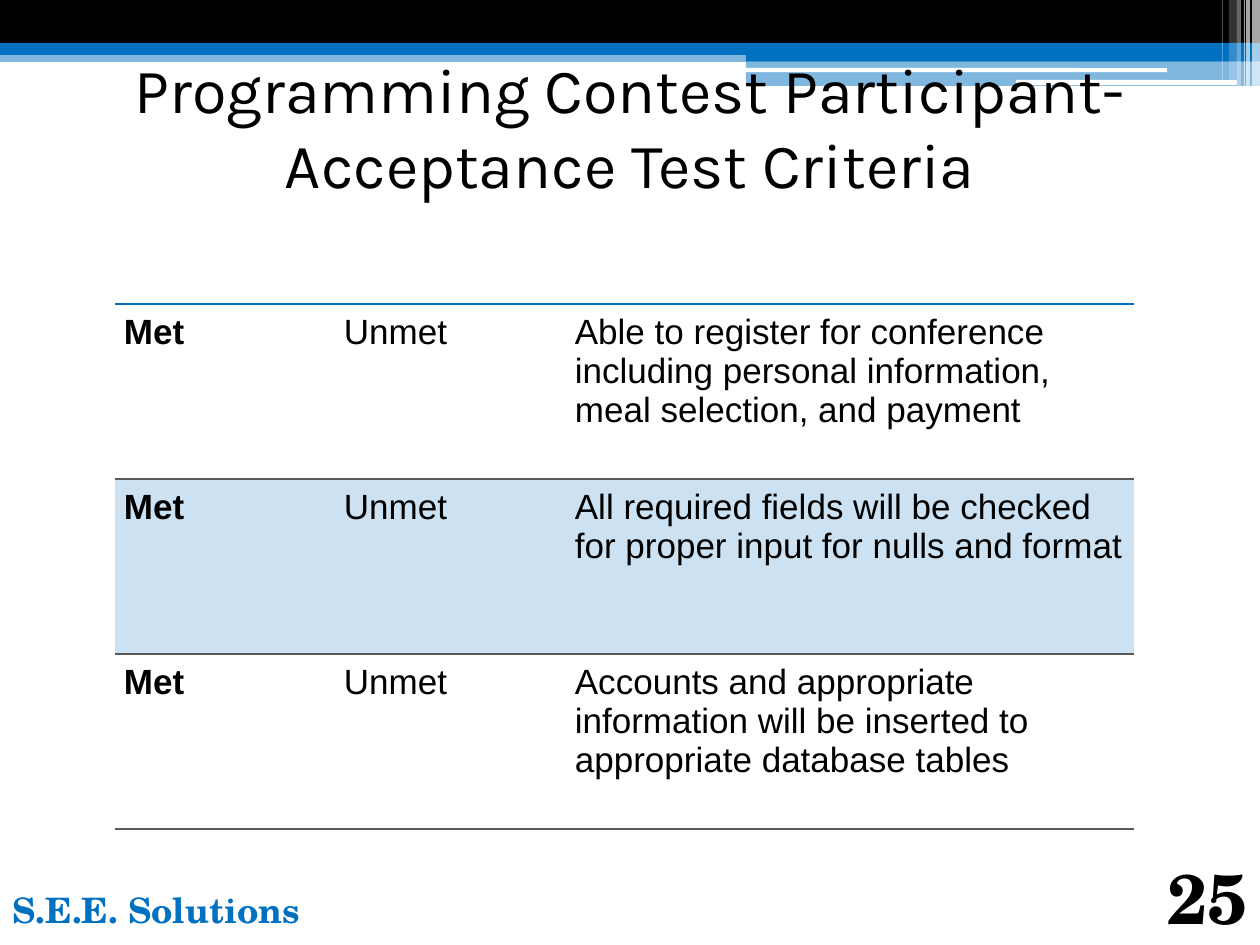
import dataclasses

import lxml.etree
import pptx
import pptx.dml.color
import pptx.enum.shapes
import pptx.enum.text
import pptx.oxml.ns
import pptx.util

SHAPE = pptx.enum.shapes.MSO_SHAPE
ALIGN = pptx.enum.text.PP_ALIGN
ANCHOR = pptx.enum.text.MSO_ANCHOR
qn = pptx.oxml.ns.qn


@dataclasses.dataclass(frozen=True)
class Theme:
    accent: str = "0070C0"
    dark: str = "000000"
    light: str = "FFFFFF"
    rule: str = "595959"
    title_font: str = "Karla"
    body_font: str = "Arial"
    footer_font: str = "TeX Gyre Schola"
    title_size: int = 36
    body_size: int = 20
    number_size: int = 40


THEME = Theme()
NO_GRID_STYLE = "{2D5ABB26-0587-4C30-8999-92F81FD0307C}"
CRITERIA = [
    "Able to register for conference including personal information, meal selection, and payment",
    "All required fields will be checked for proper input for nulls and format",
    "Accounts and appropriate information will be inserted to appropriate database tables",
]


def px(n):
    return round(n * 914400 / 126)


def rgb(color):
    return pptx.dml.color.RGBColor.from_string(color)


def set_fill(fill, color, alpha=100):
    fill.solid()
    fill.fore_color.rgb = rgb(color)
    if alpha < 100:
        clr = fill._xPr.find(qn("a:solidFill"))[0]
        lxml.etree.SubElement(clr, qn("a:alpha"), val=str(alpha * 1000))


def add_bar(s, box, color, alpha=100, kind=SHAPE.RECTANGLE):
    sp = s.shapes.add_shape(kind, *map(px, box))
    sp.shadow.inherit = False
    sp.line.fill.background()
    set_fill(sp.fill, color, alpha)


def add_run(p, text, font, size, color, bold=False):
    r = p.add_run()
    r.text = text
    r.font.name = font
    r.font.size = pptx.util.Pt(size)
    r.font.color.rgb = rgb(color)
    r.font.bold = bold


def add_text(s, box, text, font, size, color, bold=False,
             align=ALIGN.LEFT, anchor=ANCHOR.TOP):
    tf = s.shapes.add_textbox(*map(px, box)).text_frame
    tf.word_wrap = True
    tf.vertical_anchor = anchor
    p = tf.paragraphs[0]
    p.alignment = align
    add_run(p, text, font, size, color, bold)


def add_banner(s, box):
    x, y, w, h = box
    right = x + w
    step = x + 746
    add_bar(s, (x, y + 50, w, 12), THEME.accent, 50)
    add_bar(s, (x, y, w, 43), THEME.dark)
    add_bar(s, (x, y + 43, w, 12), THEME.accent)
    add_bar(s, (step, y + 49, right - step, 12), THEME.accent)
    add_bar(s, (step, y + 61, right - step, h - 61), THEME.accent, 50)
    for dx, dy, length, thick in [(745, 68, 422, 4), (1016, 80, 221, 5)]:
        add_bar(s, (x + dx, y + dy, length, thick), THEME.light,
                kind=SHAPE.ROUNDED_RECTANGLE)
    stripes = [(8, 8, h, 65), (14, 4, h, 65), (16, 1, h, 60),
               (23, 4, h, 40), (31, 8, h - 5, 20), (38, 1, h - 5, 30)]
    for inset, width, height, alpha in stripes:
        add_bar(s, (right - inset, y, width, height), THEME.light, alpha)


def set_border(cell, side, color):
    tc_pr = cell._tc.get_or_add_tcPr()
    ln = lxml.etree.SubElement(tc_pr, qn("a:" + side), w=str(pptx.util.Pt(1)))
    fill = lxml.etree.SubElement(ln, qn("a:solidFill"))
    lxml.etree.SubElement(fill, qn("a:srgbClr"), val=color)


def add_criteria(s, box):
    x, y, w, h = box
    widths = [220, 231, w - 451]
    table = s.shapes.add_table(len(CRITERIA), len(widths), *map(px, box)).table
    table.first_row = False
    table.horz_banding = False
    table._tbl.tblPr.find(qn("a:tableStyleId")).text = NO_GRID_STYLE
    for col, width in zip(table.columns, widths):
        col.width = px(width)
    for i, criterion in enumerate(CRITERIA):
        table.rows[i].height = px(h / len(CRITERIA))
        for j, text in enumerate(["Met", "Unmet", criterion]):
            cell = table.cell(i, j)
            cell.margin_left = cell.margin_right = px(9)
            cell.margin_top = cell.margin_bottom = px(9)
            if i == 0:
                set_border(cell, "lnT", THEME.accent)
            if i == 1:
                set_border(cell, "lnT", THEME.rule)
                set_fill(cell.fill, THEME.accent, 20)
            else:
                set_border(cell, "lnB", THEME.rule)
                cell.fill.background()
            add_run(cell.text_frame.paragraphs[0], text, THEME.body_font,
                    THEME.body_size, THEME.dark, j == 0)


def add_footer(s, box):
    x, y, w, h = box
    add_text(s, (x, y + 13, 315, h - 13), "S.E.E. Solutions", THEME.footer_font,
             THEME.body_size, THEME.accent, True)
    add_text(s, (x + w - 126, y, 126, h), "25", THEME.footer_font,
             THEME.number_size, THEME.dark, True, ALIGN.RIGHT, ANCHOR.BOTTOM)


def main():
    prs = pptx.Presentation()
    prs.slide_width, prs.slide_height = px(1260), px(945)
    s = prs.slides.add_slide(prs.slide_layouts[6])
    add_banner(s, (0, 0, 1260, 86))
    add_text(s, (63, 63, 1134, 126),
             "Programming Contest Participant- Acceptance Test Criteria",
             THEME.title_font, THEME.title_size, THEME.dark,
             align=ALIGN.CENTER, anchor=ANCHOR.MIDDLE)
    add_criteria(s, (115, 304, 1019, 525))
    add_footer(s, (0, 869, 1260, 76))
    prs.save("out.pptx")


if __name__ == "__main__":
    main()
